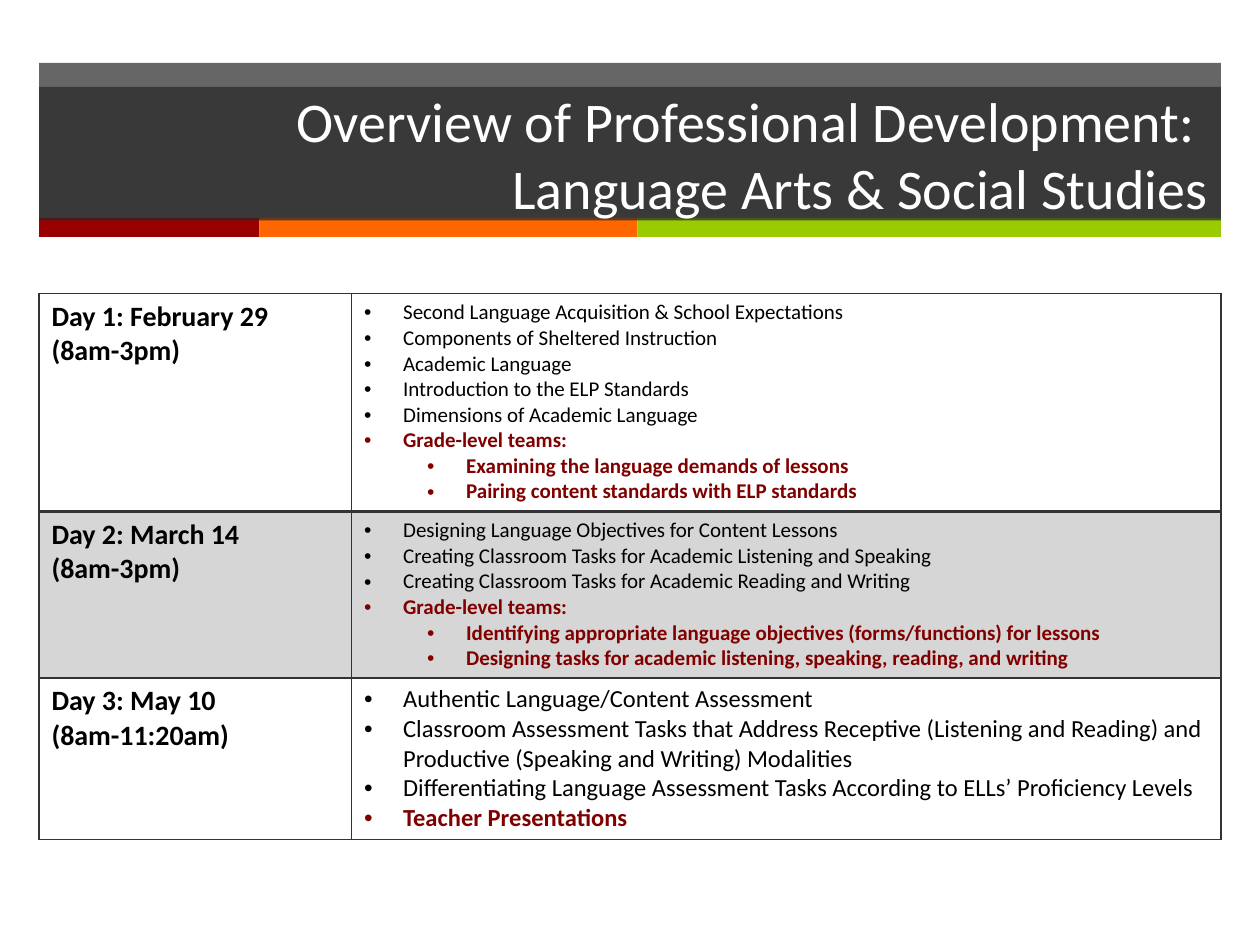
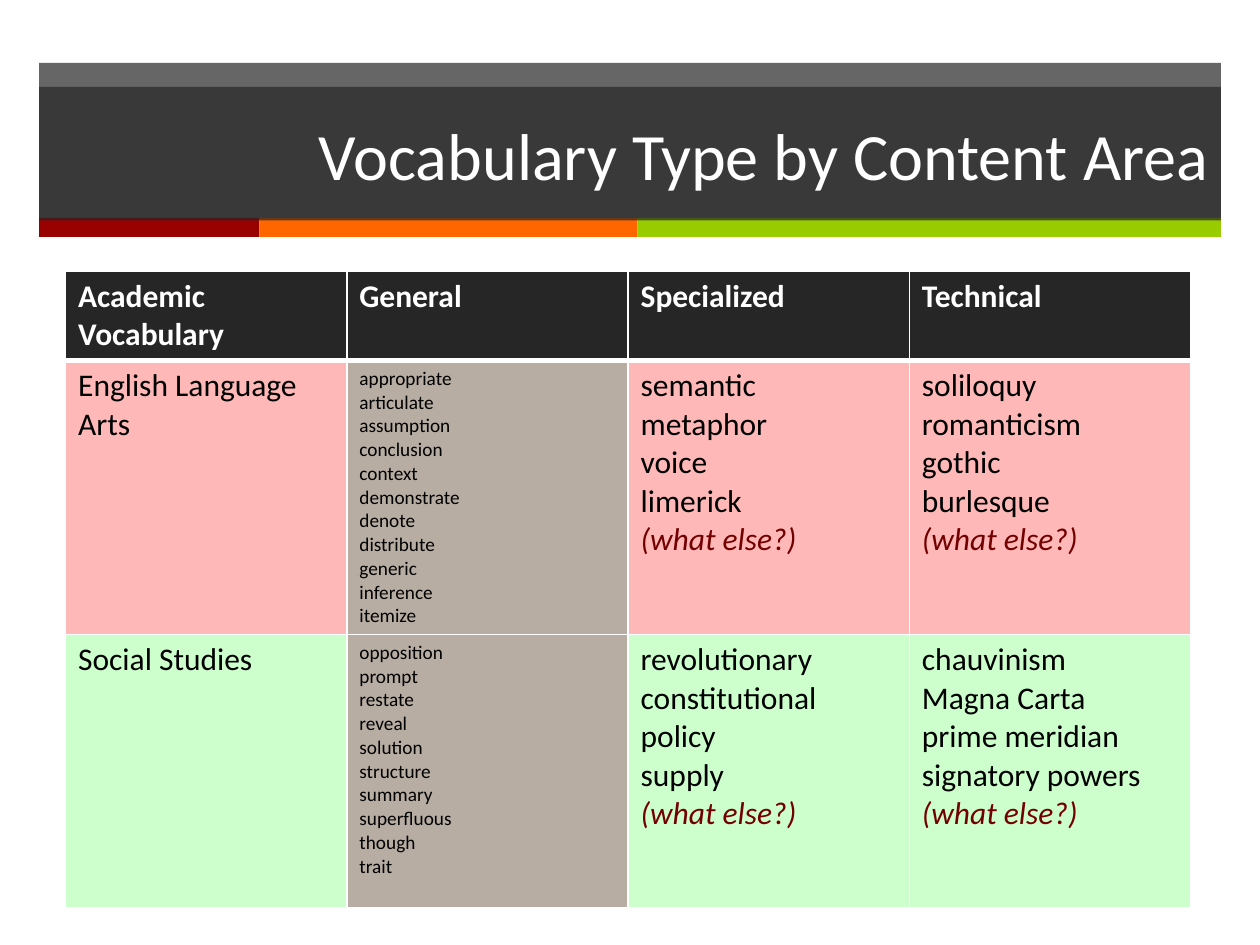
from lxml.etree import SubElement
from pptx import Presentation
from pptx.dml.color import RGBColor as Rgb
from pptx.enum.shapes import MSO_SHAPE as Shape
from pptx.enum.text import MSO_ANCHOR as Anchor, MSO_AUTO_SIZE as Fit, PP_ALIGN as Align
from pptx.oxml import parse_xml
from pptx.oxml.ns import nsdecls, qn
from pptx.util import Inches, Pt

FONT = "Calibri"
HUES = {
    "white": "FFFFFF", "black": "000000", "dark": "262626", "rule": "333333",
    "red": "990000", "orange": "FF6600", "lime": "99CC00",
    "team": "800000", "ask": "730000", "grey": "D6D6D6",
    "pink": "FFB8B8", "taupe": "B7ADA3", "mint": "CCFFCC",
}
LEFT, WIDTH = 0.31, 9.38
STRIPES = [("red", 1.75), ("orange", 3), ("lime", 4.63)]


class Deck:
    def __init__(self):
        self.prs = Presentation()
        self.prs.slide_width, self.prs.slide_height = Inches(10), Inches(7.5)
        self.slide = None

    def paint(self, item, hue):
        """Fill a shape or a cell."""
        item.fill.solid()
        item.fill.fore_color.rgb = Rgb.from_string(HUES[hue])

    def fade(self, shape, alpha):
        """Make a filled shape see-through (alpha in percent)."""
        tone = shape.element.spPr.find(".//" + qn("a:srgbClr"))
        SubElement(tone, qn("a:alpha"), val=str(alpha * 1000))

    def band(self, x, y, w, h, hue):
        box = self.slide.shapes.add_shape(
            Shape.RECTANGLE, Inches(x), Inches(y), Inches(w), Inches(h))
        box.shadow.inherit = False
        box.line.fill.background()
        self.paint(box, hue)
        return box

    def run(self, para, text, size, hue="black", bold=False, italic=False):
        run = para.add_run()
        run.text = text
        font = run.font
        font.name, font.size = FONT, Pt(size)
        font.bold, font.italic = bold, italic
        font.color.rgb = Rgb.from_string(HUES[hue])

    def start(self, lines, size):
        """Add a slide with the shared bands and a title."""
        self.slide = self.prs.slides.add_slide(self.prs.slide_layouts[5])
        self.fade(self.band(LEFT, 0.5, WIDTH, 1.24, "dark"), 70)
        x = LEFT
        for hue, w in STRIPES:
            self.band(x, 1.73, w, 0.15, hue)
            x += w

        title = self.slide.shapes.title
        title.left, title.top = Inches(LEFT), Inches(0.69)
        title.width, title.height = Inches(WIDTH), Inches(1.06)
        self.paint(title, "dark")
        self.fade(title, 70)
        # Bring the title in front of the bands
        title.element.getparent().append(title.element)

        frame = title.text_frame
        frame.auto_size, frame.word_wrap = Fit.NONE, True
        frame.vertical_anchor = Anchor.MIDDLE
        para = frame.paragraphs[0]
        para.alignment = Align.RIGHT
        for i, line in enumerate(lines):
            if i:
                para.add_line_break()
            self.run(para, line, size, "white")

    def table(self, x, y, cols, rows, hue, thick):
        """Add a ruled table; thick is the rule width under the first row."""
        grid = self.slide.shapes.add_table(
            len(rows), len(cols), Inches(x), Inches(y),
            Inches(sum(cols)), Inches(sum(rows))).table
        grid.first_row = grid.horz_banding = False
        for col, w in zip(grid.columns, cols):
            col.width = Inches(w)
        for r, (row, h) in enumerate(zip(grid.rows, rows)):
            row.height = Inches(h)
            for cell in row.cells:
                cell.fill.background()
                self.rule(cell, hue, {"L": 1, "R": 1,
                                      "T": thick if r == 1 else 1,
                                      "B": thick if r == 0 else 1})
        return grid

    def rule(self, cell, hue, sides):
        props = cell._tc.get_or_add_tcPr()
        for i, (side, width) in enumerate(sides.items()):
            props.insert(i, parse_xml(
                f'<a:ln{side} {nsdecls("a")} w="{Pt(width)}"><a:solidFill>'
                f'<a:srgbClr val="{HUES[hue]}"/></a:solidFill></a:ln{side}>'))

    def line(self, cell, text, size, level=None, **look):
        """Add a paragraph to a cell; a level makes it a bullet."""
        frame = cell.text_frame
        para = frame.paragraphs[0]
        if para.runs:
            para = frame.add_paragraph()
        if level is not None:
            para.level = level
            props = para._p.get_or_add_pPr()
            props.set("marL", str(Inches(0.31 + 0.5 * level)))
            props.set("indent", str(Inches(-0.31)))
            SubElement(props, qn("a:buFont"), typeface="Arial")
            SubElement(props, qn("a:buChar"), char="•")
        self.run(para, text, size, **look)


# Day, text size, topics, team heading, team tasks
DAYS = [
    ("Day 1: February 29 (8am-3pm)", 12,
     ["Second Language Acquisition & School Expectations",
      "Components of Sheltered Instruction",
      "Academic Language",
      "Introduction to the ELP Standards",
      "Dimensions of Academic Language"],
     "Grade-level teams:",
     ["Examining the language demands of lessons",
      "Pairing content standards with ELP standards"]),
    ("Day 2: March 14 (8am-3pm)", 12,
     ["Designing Language Objectives for Content Lessons",
      "Creating Classroom Tasks for Academic Listening and Speaking",
      "Creating Classroom Tasks for Academic Reading and Writing"],
     "Grade-level teams:",
     ["Identifying appropriate language objectives (forms/functions) for lessons",
      "Designing tasks for academic listening, speaking, reading, and writing"]),
    ("Day 3: May 10 (8am-11:20am)", 14,
     ["Authentic Language/Content Assessment",
      "Classroom Assessment Tasks that Address Receptive (Listening and Reading) "
      "and Productive (Speaking and Writing) Modalities",
      "Differentiating Language Assessment Tasks According to ELLs’ Proficiency Levels"],
     "Teacher Presentations", []),
]

HEADS = ["Academic Vocabulary", "General", "Specialized", "Technical"]
ASK = "(what else?)"
# Subject, fill, general words, specialized words, technical words
AREAS = [
    ("English Language Arts", "pink",
     ["appropriate", "articulate", "assumption", "conclusion", "context",
      "demonstrate", "denote", "distribute", "generic", "inference", "itemize"],
     ["semantic", "metaphor", "voice", "limerick"],
     ["soliloquy", "romanticism", "gothic", "burlesque"]),
    ("Social Studies", "mint",
     ["opposition", "prompt", "restate", "reveal", "solution", "structure",
      "summary", "superfluous", "though", "trait"],
     ["revolutionary", "constitutional", "policy", "supply"],
     ["chauvinism", "Magna Carta", "prime meridian", "signatory powers"]),
]


def plan(deck):
    deck.start(["Overview of Professional Development: ",
                "Language Arts & Social Studies"], 32)
    grid = deck.table(LEFT, 2.33, [2.48, 6.9], [1.73, 1.32, 1.28], "rule", 2)
    team = {"hue": "team", "bold": True}
    for r, (day, size, topics, head, tasks) in enumerate(DAYS):
        date, agenda = grid.cell(r, 0), grid.cell(r, 1)
        deck.line(date, day, 16, bold=True)
        for topic in topics:
            deck.line(agenda, topic, size, 0)
        deck.line(agenda, head, size, 0, **team)
        for task in tasks:
            deck.line(agenda, task, size, 1, **team)
        if r == 1:
            for cell in (date, agenda):
                deck.paint(cell, "grey")


def vocab(deck):
    deck.start(["Vocabulary Type by Content Area"], 37.8)
    grid = deck.table(0.52, 2.15, [8.93 / 4] * 4, [0.71, 2.17, 2.17], "white", 3)
    for c, head in enumerate(HEADS):
        cell = grid.cell(0, c)
        deck.paint(cell, "dark")
        deck.line(cell, head, 18, hue="white", bold=True)
    for r, (name, hue, *lists) in enumerate(AREAS, 1):
        for c, words in enumerate([[name], *lists]):
            cell = grid.cell(r, c)
            deck.paint(cell, "taupe" if c == 1 else hue)
            for word in words:
                deck.line(cell, word, 11 if c == 1 else 18)
            if c > 1:
                deck.line(cell, ASK, 18, hue="ask", italic=True)


def main():
    deck = Deck()
    plan(deck)
    vocab(deck)
    deck.prs.save("out.pptx")


if __name__ == "__main__":
    main()
